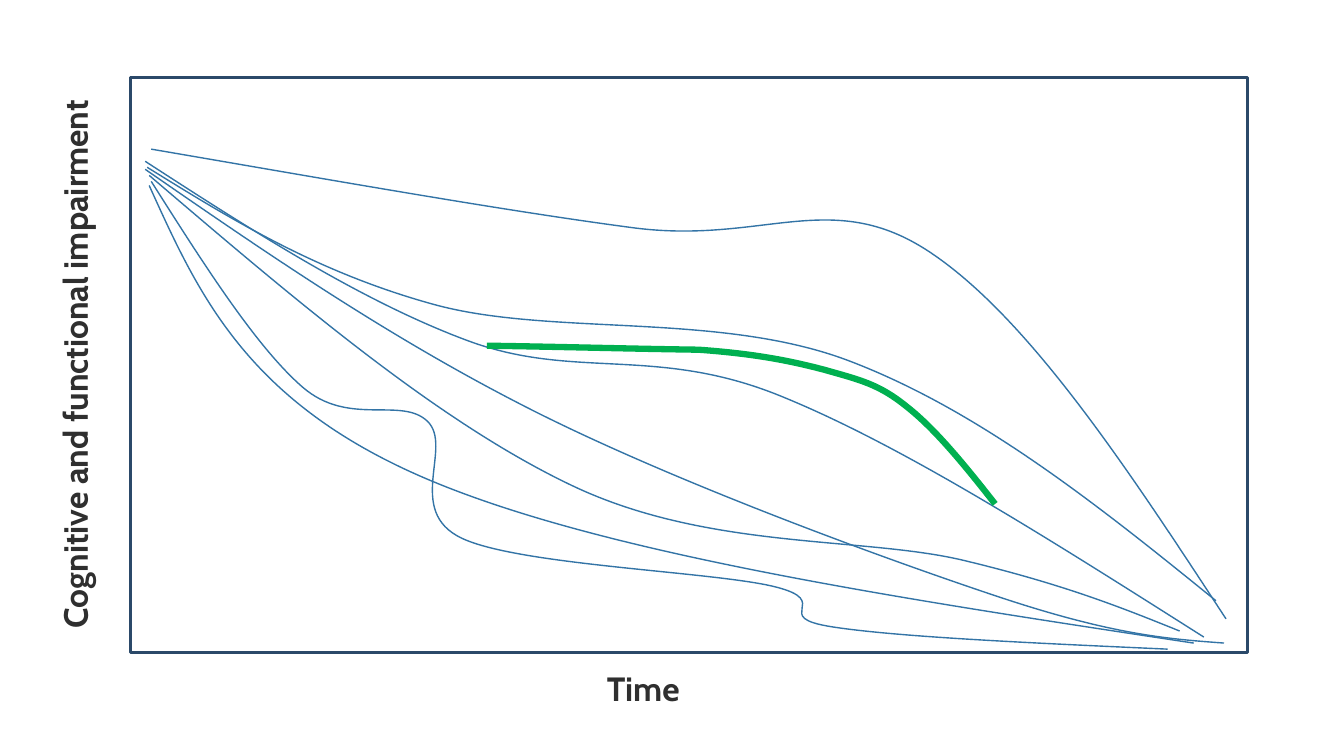
from dataclasses import dataclass

from lxml import etree
from pptx import Presentation
from pptx.dml.color import RGBColor
from pptx.enum.shapes import MSO_SHAPE
from pptx.enum.text import MSO_AUTO_SIZE
from pptx.oxml.ns import qn
from pptx.shapes.autoshape import Shape
from pptx.slide import Slide
from pptx.util import Inches, Pt

RECT = MSO_SHAPE.RECTANGLE
GROW = MSO_AUTO_SIZE.SHAPE_TO_FIT_TEXT

NAVY = RGBColor(0x2B, 0x49, 0x69)
BLUE = RGBColor(0x33, 0x74, 0xA6)
GREEN = RGBColor(0x00, 0xB0, 0x50)
DARK = RGBColor(0x2F, 0x2F, 0x2F)
FONT = "Cabin"

Point = tuple[float, float]


@dataclass
class Label:
    text: str
    left: float
    top: float
    width: float
    turn: int = 0


@dataclass
class Curve:
    """A start point, then two control points and an end for each bend."""
    points: list[Point]
    color: RGBColor = BLUE
    weight: float = 1


LABELS = [
    Label("Cognitive and functional impairment", -2.11, 3.23, 5.7, 270),
    Label("Time", 5.92, 6.58, 4.8),
]

CURVES = [
    Curve([(1.44, 1.6), (2.52, 2.3), (3.59, 2.99), (4.64, 3.38),
           (5.69, 3.77), (6.5, 3.43), (7.72, 3.92),
           (8.94, 4.41), (10.44, 5.37), (11.94, 6.32)]),
    Curve([(1.46, 1.66), (2.3, 2.18), (3.14, 2.7), (4.3, 3.02),
           (5.46, 3.34), (7.13, 3.09), (8.42, 3.58),
           (9.71, 4.07), (10.89, 5.01), (12.06, 5.96)]),
    Curve([(1.48, 1.84), (1.96, 2.9), (2.43, 3.96), (4.16, 4.72),
           (5.89, 5.48), (8.86, 5.93), (11.84, 6.38)]),
    Curve([(1.48, 1.74), (2.91, 2.96), (4.33, 4.18), (5.68, 4.82),
           (7.03, 5.46), (8.56, 5.32), (9.56, 5.56),
           (10.56, 5.8), (11.13, 6.03), (11.7, 6.26)]),
    Curve([(1.5, 1.48), (3.25, 1.78), (4.99, 2.09), (6.28, 2.26),
           (7.57, 2.43), (8.24, 1.85), (9.22, 2.5),
           (10.2, 3.15), (11.18, 4.64), (12.16, 6.14)]),
    Curve([(1.44, 1.68), (2.67, 2.53), (3.89, 3.37), (5.3, 4.08),
           (6.71, 4.79), (8.76, 5.54), (9.9, 5.92),
           (11.04, 6.3), (11.59, 6.34), (12.14, 6.38)]),
    Curve([(1.5, 1.8), (2.02, 2.62), (2.54, 3.44), (3, 3.84),
           (3.46, 4.24), (3.98, 3.93), (4.24, 4.18),
           (4.5, 4.43), (4.01, 5.07), (4.58, 5.34),
           (5.15, 5.61), (7.07, 5.67), (7.68, 5.82),
           (8.29, 5.97), (7.61, 6.12), (8.26, 6.22),
           (8.91, 6.32), (10.24, 6.38), (11.58, 6.44)]),
    Curve([(4.83, 3.43), (5.53, 3.44), (6.23, 3.46), (6.93, 3.47),
           (7.49, 3.51), (7.84, 3.58), (8.18, 3.67),
           (8.53, 3.77), (8.72, 3.81), (9, 4.04),
           (9.28, 4.26), (9.58, 4.63), (9.87, 5)], GREEN, 4.5),
]


def outline(shape: Shape, color: RGBColor, weight: float) -> None:
    shape.shadow.inherit = False
    shape.fill.background()
    shape.line.color.rgb = color
    shape.line.width = Pt(weight)


def bend(shape: Shape) -> None:
    """Turn each three line segments into one cubic Bézier segment."""
    track = next(shape.element.iter(qn("a:path")))
    steps = track.findall(qn("a:lnTo"))
    for i in range(0, len(steps), 3):
        cubic = etree.SubElement(track, qn("a:cubicBezTo"))
        for step in steps[i:i + 3]:
            cubic.append(step[0])
            track.remove(step)


def draw_curve(slide: Slide, curve: Curve) -> None:
    start, *rest = [(Inches(x), Inches(y)) for x, y in curve.points]
    pen = slide.shapes.build_freeform(*start)
    pen.add_line_segments(rest, close=False)
    shape = pen.convert_to_shape()
    bend(shape)
    outline(shape, curve.color, curve.weight)


def draw_label(slide: Slide, label: Label) -> None:
    box = slide.shapes.add_textbox(Inches(label.left), Inches(label.top),
                                   Inches(label.width), Inches(0.5))
    box.rotation = label.turn
    frame = box.text_frame
    frame.word_wrap = True
    frame.auto_size = GROW
    run = frame.paragraphs[0].add_run()
    run.text = label.text
    font = run.font
    font.name = FONT
    font.size = Pt(24)
    font.bold = True
    font.color.rgb = DARK


def main() -> None:
    deck = Presentation()
    deck.slide_width = Inches(13.33)
    deck.slide_height = Inches(7.5)
    slide = deck.slides.add_slide(deck.slide_layouts[6])
    plot = slide.shapes.add_shape(RECT, Inches(1.29), Inches(0.77),
                                  Inches(11.08), Inches(5.7))
    outline(plot, NAVY, 2.25)
    for label in LABELS:
        draw_label(slide, label)
    for curve in CURVES:
        draw_curve(slide, curve)
    deck.save("out.pptx")


if __name__ == "__main__":
    main()
